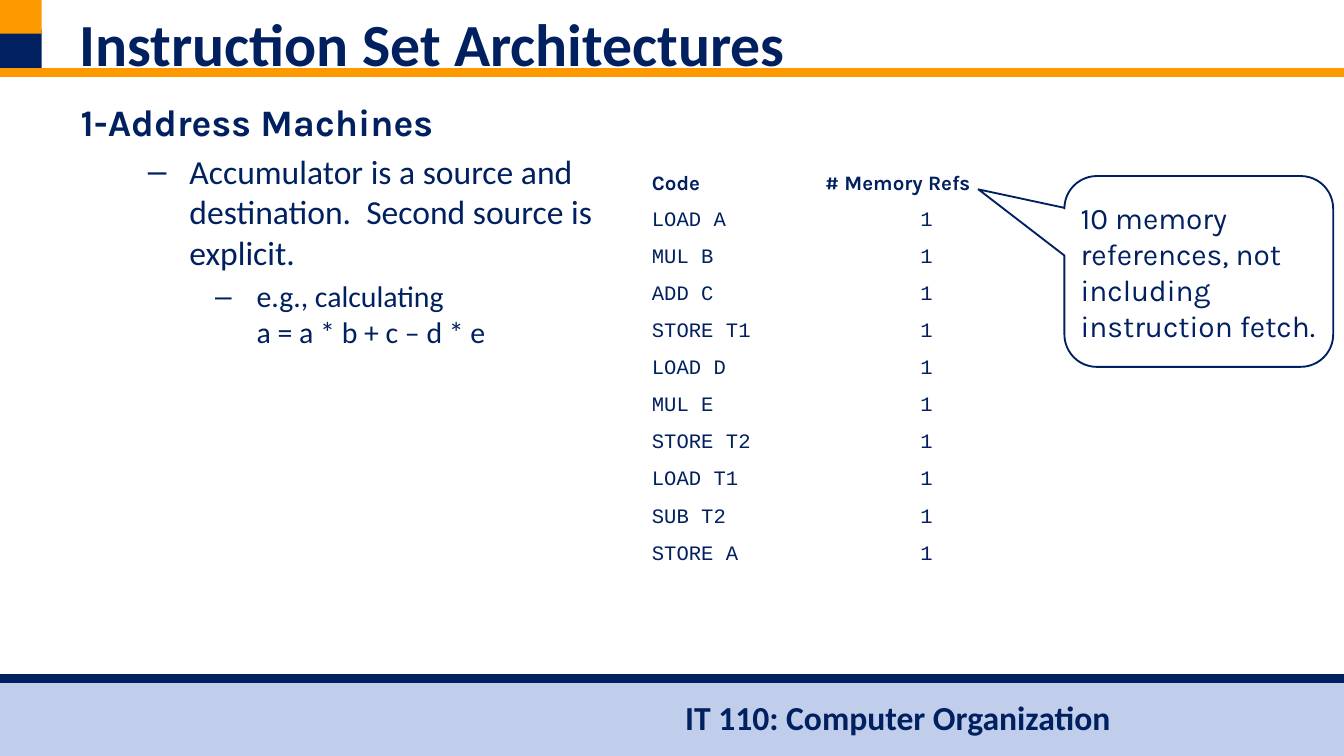
import pptx
import pptx.util
import pptx.dml.color
import pptx.enum.shapes
import pptx.enum.text
import pptx.oxml.ns
import lxml.etree

Inches = pptx.util.Inches
Pt = pptx.util.Pt
Color = pptx.dml.color.RGBColor
Shape = pptx.enum.shapes.MSO_SHAPE
Align = pptx.enum.text.PP_ALIGN
Anchor = pptx.enum.text.MSO_ANCHOR
qn = pptx.oxml.ns.qn

NAVY = Color(0x00, 0x20, 0x60)
GOLD = Color(0xFF, 0x99, 0x00)
PALE = Color(0xC0, 0xCD, 0xEB)
WHITE = Color(0xFF, 0xFF, 0xFF)

WIDE = 10
HIGH = WIDE * 9 / 16
CODE = ["LOAD A", "MUL B", "ADD C", "STORE T1", "LOAD D", "MUL E",
        "STORE T2", "LOAD T1", "SUB T2", "STORE A"]
POINTS = [
    ("1-Address Machines", 0, 0.38, -0.38, 0, None,
     dict(size=20, face="Karla", bold=True)),
    ("Accumulator is a source and \ndestination.  Second source is \nexplicit.",
     1, 0.81, -0.31, 3.6, "–", dict(size=18)),
    ("e.g., calculating \na = a * b + c – d * e",
     2, 1.31, -0.31, 3.2, "–", dict(size=16)),
]


def write(para, text, size, face="Calibri", bold=False, align=Align.LEFT):
    para.text = text
    para.alignment = align
    for run in para.runs:
        run.font.size = Pt(size)
        run.font.name = face
        run.font.bold = bold
        run.font.color.rgb = NAVY
    for gap in para._p.findall(qn("a:br")):
        lxml.etree.SubElement(gap, qn("a:rPr"), sz=str(size * 100))


def place(shape, left, top, width, height):
    shape.left, shape.top = Inches(left), Inches(top)
    shape.width, shape.height = Inches(width), Inches(height)
    frame = shape.text_frame
    frame.word_wrap = True
    frame.auto_size = pptx.enum.text.MSO_AUTO_SIZE.NONE
    frame.vertical_anchor = Anchor.TOP
    return frame


def mark(para, sign, left, indent):
    props = para._p.get_or_add_pPr()
    props.set("marL", str(Inches(left)))
    props.set("indent", str(Inches(indent)))
    if sign is None:
        lxml.etree.SubElement(props, qn("a:buNone"))
        return
    tint = lxml.etree.SubElement(props, qn("a:buClr"))
    lxml.etree.SubElement(tint, qn("a:srgbClr"), val=str(NAVY))
    lxml.etree.SubElement(props, qn("a:buChar"), char=sign)


def block(slide, color, left, top, width, height):
    shape = slide.shapes.add_shape(
        Shape.RECTANGLE, Inches(left), Inches(top), Inches(width), Inches(height))
    shape.shadow.inherit = False
    shape.fill.solid()
    shape.fill.fore_color.rgb = color
    shape.line.fill.background()


def rule(slide, color, left, top, width):
    line = slide.shapes.add_connector(
        pptx.enum.shapes.MSO_CONNECTOR.STRAIGHT,
        Inches(left), Inches(top), Inches(left + width), Inches(top))
    line.line.color.rgb = color
    line.line.width = Pt(4.5)
    lxml.etree.SubElement(line._element.spPr, qn("a:effectLst"))


def header(slide, left, top, width, height):
    block(slide, NAVY, left, top + 0.22, 0.31, 0.32)
    rule(slide, GOLD, left, top + height, width)
    block(slide, GOLD, left, top, 0.31, 0.25)
    frame = place(slide.shapes.title, left + 0.49, top, width - 0.98, height - 0.01)
    write(frame.paragraphs[0], "Instruction Set Architectures", size=32, bold=True)


def footer(slide, left, top, width, height):
    block(slide, PALE, left, top, width, height)
    rule(slide, NAVY, left, top - 0.01, width)
    label = slide.shapes.add_textbox(0, 0, 0, 0)
    frame = place(label, left + 5, top + 0.08, 3.39, 0.4)
    write(frame.paragraphs[0], "IT 110: Computer Organization", size=18, bold=True)


def outline(slide, left, top, width, height):
    frame = place(slide.placeholders[1], left, top, width, height)
    for row, (text, level, margin, indent, space, sign, style) in enumerate(POINTS):
        para = frame.add_paragraph() if row else frame.paragraphs[0]
        para.level = level
        para.space_before = Pt(space)
        mark(para, sign, margin, indent)
        write(para, text, **style)


def listing(slide, left, top, width, height):
    rows = [("Code", "# Memory Refs")] + [(line, "1") for line in CODE]
    table = slide.shapes.add_table(
        len(rows), 2, Inches(left), Inches(top), Inches(width), Inches(height)).table
    table.horz_banding = False
    for column, share in zip(table.columns, (0.43, 0.57)):
        column.width = Inches(width * share)
    for row, texts in enumerate(rows):
        table.rows[row].height = Inches(height / len(rows))
        for col, text in enumerate(texts):
            cell = table.cell(row, col)
            cell.fill.solid()
            cell.fill.fore_color.rgb = WHITE
            write(cell.text_frame.paragraphs[0], text, size=11,
                  face="Courier New" if row else "Karla", bold=row == 0,
                  align=Align.CENTER if row and col else Align.LEFT)


def callout(slide, left, top, width, height):
    shape = slide.shapes.add_shape(Shape.ROUNDED_RECTANGULAR_CALLOUT, 0, 0, 0, 0)
    frame = place(shape, left, top, width, height)
    for spot, value in enumerate((-0.82, -0.43, 0.17)):
        shape.adjustments[spot] = value
    shape.shadow.inherit = False
    shape.fill.solid()
    shape.fill.fore_color.rgb = WHITE
    shape.line.color.rgb = NAVY
    shape.line.width = Pt(1)
    frame.margin_left = frame.margin_right = Inches(0.05)
    frame.vertical_anchor = Anchor.MIDDLE
    write(frame.paragraphs[0],
          "10 memory references, not including instruction fetch.",
          size=16, face="Karla")


def main():
    deck = pptx.Presentation()
    deck.slide_width, deck.slide_height = Inches(WIDE), Inches(HIGH)
    slide = deck.slides.add_slide(deck.slide_layouts[1])
    footer(slide, 0, 5.06, WIDE, HIGH - 5.06)
    header(slide, 0, 0, WIDE, 0.54)
    outline(slide, 0.5, 0.69, 9, 3.71)
    listing(slide, 4.75, 1.23, 3, 2.75)
    callout(slide, 7.92, 1.31, 2, 1.42)
    deck.save("out.pptx")


if __name__ == "__main__":
    main()
